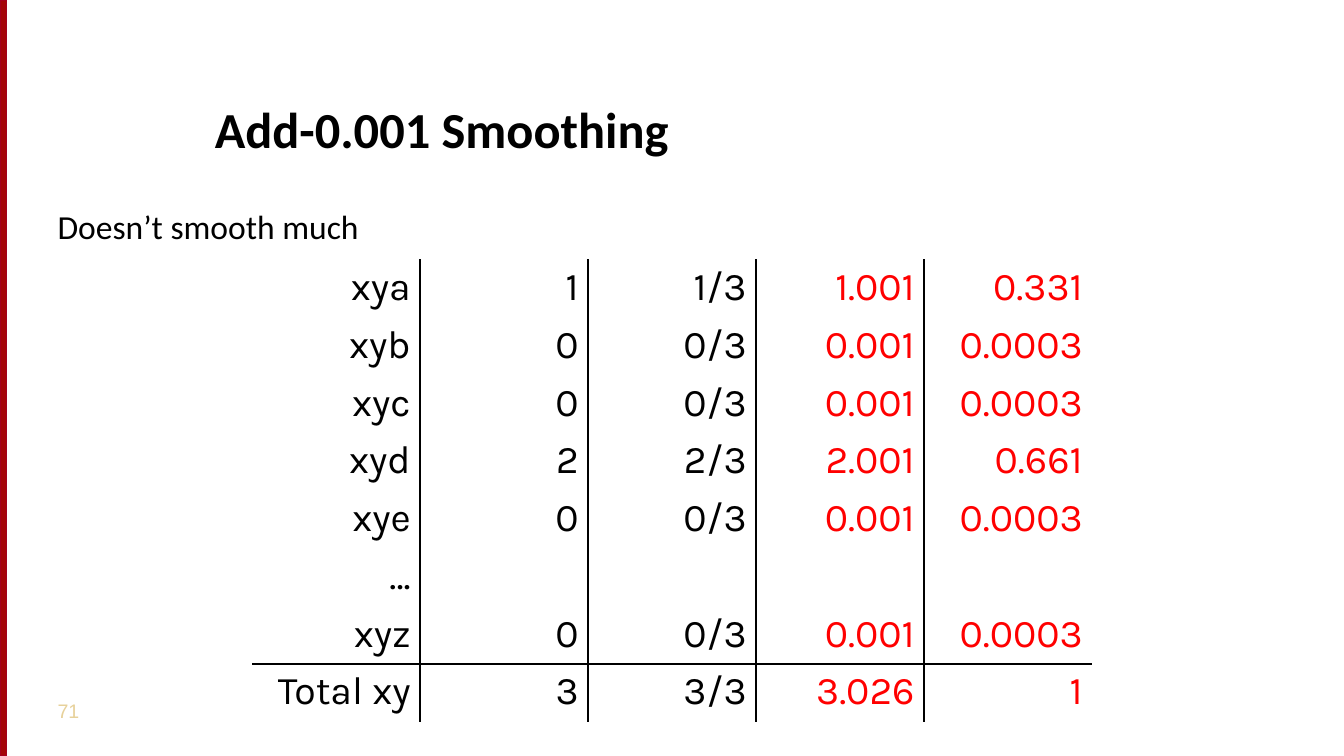
from dataclasses import dataclass

from lxml import etree
from pptx import Presentation
from pptx import util as u
from pptx.dml.color import RGBColor
from pptx.enum import shapes, text
from pptx.oxml import ns

COLORS = {
    "ink": "000000",
    "smoothed": "FF0000",
    "bar": "A40508",
    "bar_edge": "A4001D",
    "number": "E7D19A",
}
ROWS = [
    ("xya", "1", "1/3", "1.001", "0.331"),
    ("xyb", "0", "0/3", "0.001", "0.0003"),
    ("xyc", "0", "0/3", "0.001", "0.0003"),
    ("xyd", "2", "2/3", "2.001", "0.661"),
    ("xye", "0", "0/3", "0.001", "0.0003"),
    ("…", "", "", "", ""),
    ("xyz", "0", "0/3", "0.001", "0.0003"),
    ("Total xy", "3", "3/3", "3.026", "1"),
]
SLIDE_WIDTH = 10
SLIDE_HEIGHT = SLIDE_WIDTH * 9 / 16
FIRST_SMOOTHED_COLUMN = 3
COLUMN_WIDTH = 1.25
ROW_HEIGHT = 0.42
PLAIN_TABLE_STYLE = "{2D5ABB26-0587-4C30-8999-92F81FD0307C}"


@dataclass
class Label:
    content: str
    box: tuple
    size: float
    font: str
    color: str = "ink"
    bold: bool = False
    anchor: text.MSO_ANCHOR = text.MSO_ANCHOR.TOP


LABELS = [
    Label("Add-0.001 Smoothing", (1.5, 0.42, 8.17, 0.81), 27, "Calibri",
          bold=True, anchor=text.MSO_ANCHOR.BOTTOM),
    Label("Doesn’t smooth much", (0.33, 1.48, 9.33, 3.65), 18, "Calibri"),
    Label("71", (0.33, 5.15, 2.17, 0.38), 10.5, "Arial", "number"),
]


def color(name: str) -> RGBColor:
    return RGBColor.from_string(COLORS[name])


def set_attributes(target, values: dict) -> None:
    for name, value in values.items():
        setattr(target, name, value)


def write(paragraph, content: str, size: float, font: str, color_name: str, bold: bool = False) -> None:
    run = paragraph.add_run()
    run.text = content
    set_attributes(run.font, {"size": u.Pt(size), "name": font, "bold": bold})
    run.font.color.rgb = color(color_name)


def add_side_bar(slide, length: float, thickness: float) -> None:
    left = (thickness - length) / 2
    shape = slide.shapes.add_shape(
        shapes.MSO_SHAPE.RECTANGLE,
        *map(u.Inches, (left, -left, length, thickness)))
    shape.rotation = 90
    shape.shadow.inherit = False
    shape.fill.solid()
    shape.fill.fore_color.rgb = color("bar")
    shape.line.color.rgb = color("bar_edge")
    shape.line.width = u.Pt(0.75)


def add_label(slide, label: Label) -> None:
    shape = slide.shapes.add_textbox(*map(u.Inches, label.box))
    set_attributes(shape.text_frame, {"word_wrap": True, "vertical_anchor": label.anchor})
    write(shape.text_frame.paragraphs[0], label.content, label.size,
          label.font, label.color, label.bold)


def add_borders(cell, sides: str) -> None:
    properties = cell._tc.get_or_add_tcPr()
    for side in sides:
        line = etree.SubElement(properties, ns.qn(f"a:ln{side}"), w=str(u.Pt(1)))
        fill = etree.SubElement(line, ns.qn("a:solidFill"))
        etree.SubElement(fill, ns.qn("a:srgbClr"), val=COLORS["ink"])


def border_sides(row: int, column: int) -> str:
    total = len(ROWS) - 1
    rules = {
        "L": column > 0,
        "R": column < len(ROWS[0]) - 1,
        "T": row == total,
        "B": row == total - 1,
    }
    return "".join(side for side, shown in rules.items() if shown)


def add_counts_table(slide, top: float) -> None:
    row_count, column_count = len(ROWS), len(ROWS[0])
    width = COLUMN_WIDTH * column_count
    left = (SLIDE_WIDTH - width) / 2
    table = slide.shapes.add_table(
        row_count, column_count,
        *map(u.Inches, (left, top, width, ROW_HEIGHT * row_count))).table
    set_attributes(table, {"first_row": False, "horz_banding": False})
    table._tbl.tblPr.find(ns.qn("a:tableStyleId")).text = PLAIN_TABLE_STYLE
    margins = {
        "margin_left": u.Inches(0.07),
        "margin_right": u.Inches(0.07),
        "margin_top": u.Inches(0.04),
        "margin_bottom": u.Inches(0.04),
    }
    for row, values in enumerate(ROWS):
        for column, value in enumerate(values):
            cell = table.cell(row, column)
            set_attributes(cell, margins)
            add_borders(cell, border_sides(row, column))
            cell.fill.background()
            paragraph = cell.text_frame.paragraphs[0]
            paragraph.alignment = text.PP_ALIGN.RIGHT
            if value:
                color_name = "smoothed" if column >= FIRST_SMOOTHED_COLUMN else "ink"
                write(paragraph, value, 21, "Karla", color_name)


def main() -> None:
    presentation = Presentation()
    set_attributes(presentation, {
        "slide_width": u.Inches(SLIDE_WIDTH),
        "slide_height": u.Inches(SLIDE_HEIGHT),
    })
    slide = presentation.slides.add_slide(presentation.slide_layouts[6])
    add_side_bar(slide, SLIDE_HEIGHT, 0.05)
    for label in LABELS:
        add_label(slide, label)
    add_counts_table(slide, 1.93)
    presentation.save("out.pptx")


if __name__ == "__main__":
    main()
